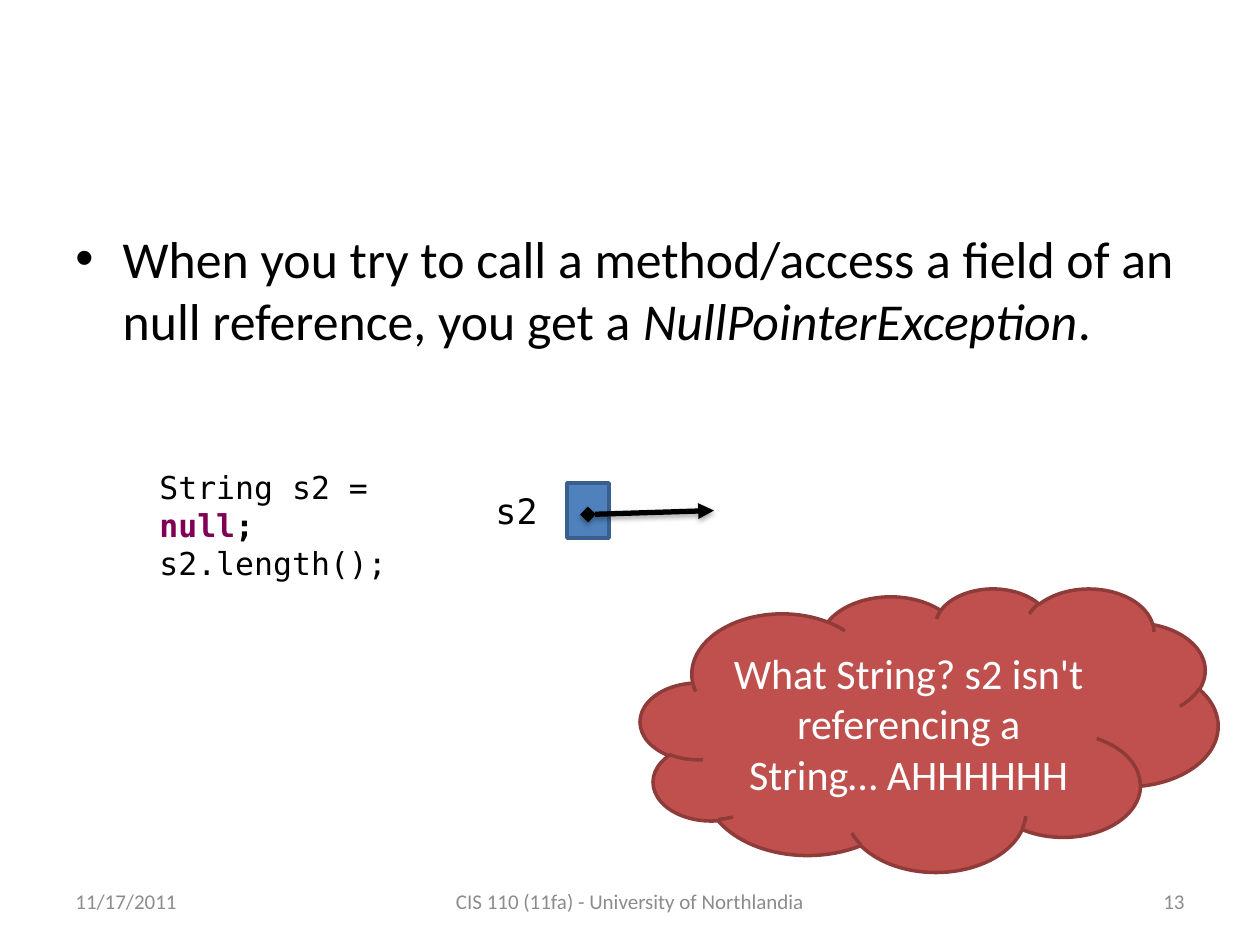
import dataclasses

import pptx
import pptx.dml.color
import pptx.enum.shapes
import pptx.enum.text
import pptx.oxml
import pptx.oxml.ns
import pptx.util

Pt = pptx.util.Pt
Kind = pptx.enum.shapes.MSO_SHAPE
Side = pptx.enum.text.PP_ALIGN
Mid = pptx.enum.text.MSO_ANCHOR
Fit = pptx.enum.text.MSO_AUTO_SIZE
SANS, MONO = "Calibri", "DejaVu Sans Mono"
BLACK, GREY, WHITE, PLUM = "000000", "8C8C8C", "FFFFFF", "7F0055"


@dataclasses.dataclass
class Box:
    left: float
    top: float
    width: float
    height: float


@dataclasses.dataclass
class Run:
    text: str
    bold: bool = False
    slant: bool = False
    color: str = ""


@dataclasses.dataclass
class Foot:
    text: str
    box: Box
    side: Side


def paint(color: str) -> pptx.dml.color.RGBColor:
    return pptx.dml.color.RGBColor.from_string(color)


def add_xml(parent, xml: str) -> None:
    parent.append(pptx.oxml.parse_xml(
        xml.replace("{ns}", pptx.oxml.ns.nsdecls("a"))))


def write(shape, paras, *, size=18.0, font=SANS, color=BLACK,
          side=Side.LEFT, anchor=Mid.TOP, grow=False, bullet=False) -> None:
    """Fill a shape with paragraphs, each a list of runs."""
    frame = shape.text_frame
    frame.word_wrap = True
    frame.vertical_anchor = anchor
    frame.auto_size = Fit.SHAPE_TO_FIT_TEXT if grow else Fit.NONE
    for num, runs in enumerate(paras):
        para = frame.add_paragraph() if num else frame.paragraphs[0]
        para.alignment = side
        if bullet:
            para.space_before = Pt(6)
            props = para._p.get_or_add_pPr()
            props.set("marL", str(Pt(27)))
            props.set("indent", str(Pt(-27)))
            add_xml(props, '<a:buFont {ns} typeface="Arial"/>')
            add_xml(props, '<a:buChar {ns} char="•"/>')
        for item in runs:
            run = para.add_run()
            run.text = item.text
            run.font.name = font
            run.font.size = Pt(size)
            run.font.bold = item.bold
            run.font.italic = item.slant
            run.font.color.rgb = paint(item.color or color)


def add_text(slide, box: Box, paras, **form) -> None:
    area = map(Pt, dataclasses.astuple(box))
    write(slide.shapes.add_textbox(*area), paras, **form)


def add_form(slide, kind: Kind, box: Box, fill: str, edge: str):
    shape = slide.shapes.add_shape(kind, *map(Pt, dataclasses.astuple(box)))
    shape.shadow.inherit = False
    shape.fill.solid()
    shape.fill.fore_color.rgb = paint(fill)
    shape.line.color.rgb = paint(edge)
    shape.line.width = Pt(2)
    return shape


def add_arrow(slide, start, end) -> None:
    kind = pptx.enum.shapes.MSO_CONNECTOR.STRAIGHT
    arrow = slide.shapes.add_connector(kind, *map(Pt, start + end))
    arrow.line.color.rgb = paint(BLACK)
    arrow.line.width = Pt(3)
    edge = arrow.line._get_or_add_ln()
    add_xml(edge, '<a:headEnd {ns} type="diamond"/>')
    add_xml(edge, '<a:tailEnd {ns} type="triangle"/>')
    add_xml(arrow._element.spPr, (
        f'<a:effectLst {{ns}}><a:outerShdw blurRad="{Pt(3.1)}" '
        f'dist="{Pt(1.8)}" dir="5400000" rotWithShape="0">'
        f'<a:srgbClr val="{BLACK}"><a:alpha val="35000"/></a:srgbClr>'
        '</a:outerShdw></a:effectLst>'))


def main() -> None:
    deck = pptx.Presentation()
    deck.slide_width, deck.slide_height = Pt(720), Pt(540)
    slide = deck.slides.add_slide(deck.slide_layouts[6])

    # Main point
    add_text(slide, Box(36, 126, 648, 96), [[
        Run("When you try to call a method/access a field of an "
            "null reference, you get a "),
        Run("NullPointerException", slant=True), Run(".")]],
        size=29.6, bullet=True)

    # Footer
    feet = [
        Foot("11/17/2011", Box(36, 500.5, 168, 28.75), Side.LEFT),
        Foot("CIS 110 (11fa) - University of Northlandia",
             Box(246, 500.5, 228, 28.75), Side.CENTER),
        Foot("13", Box(516, 500.5, 168, 28.75), Side.RIGHT),
    ]
    for foot in feet:
        add_text(slide, foot.box, [[Run(foot.text)]], size=12, color=GREY,
                 side=foot.side, anchor=Mid.MIDDLE)

    # Code
    add_text(slide, Box(84, 264, 186, 51), [
        [Run("String s2 = "), Run("null", bold=True, color=PLUM),
         Run(";", bold=True)],
        [Run("s2.length();")]], font=MONO, grow=True)

    # Variable and its dangling reference
    add_text(slide, Box(276, 276, 48, 31.5), [[Run("s2")]],
             size=20, font=MONO, grow=True)
    add_form(slide, Kind.RECTANGLE, Box(324, 276, 24, 31.5),
             "4F81BD", "3A5F8C")
    add_arrow(slide, (336, 294), (408, 291.75))

    # Outcry
    cloud = add_form(slide, Kind.CLOUD, Box(366, 336, 330, 162),
                     "C0504D", "8E3B39")
    write(cloud, [[Run("What String? s2 isn't referencing a "
                       "String… AHHHHHH")]],
          size=24, color=WHITE, side=Side.CENTER, anchor=Mid.MIDDLE)

    deck.save("out.pptx")


if __name__ == "__main__":
    main()
